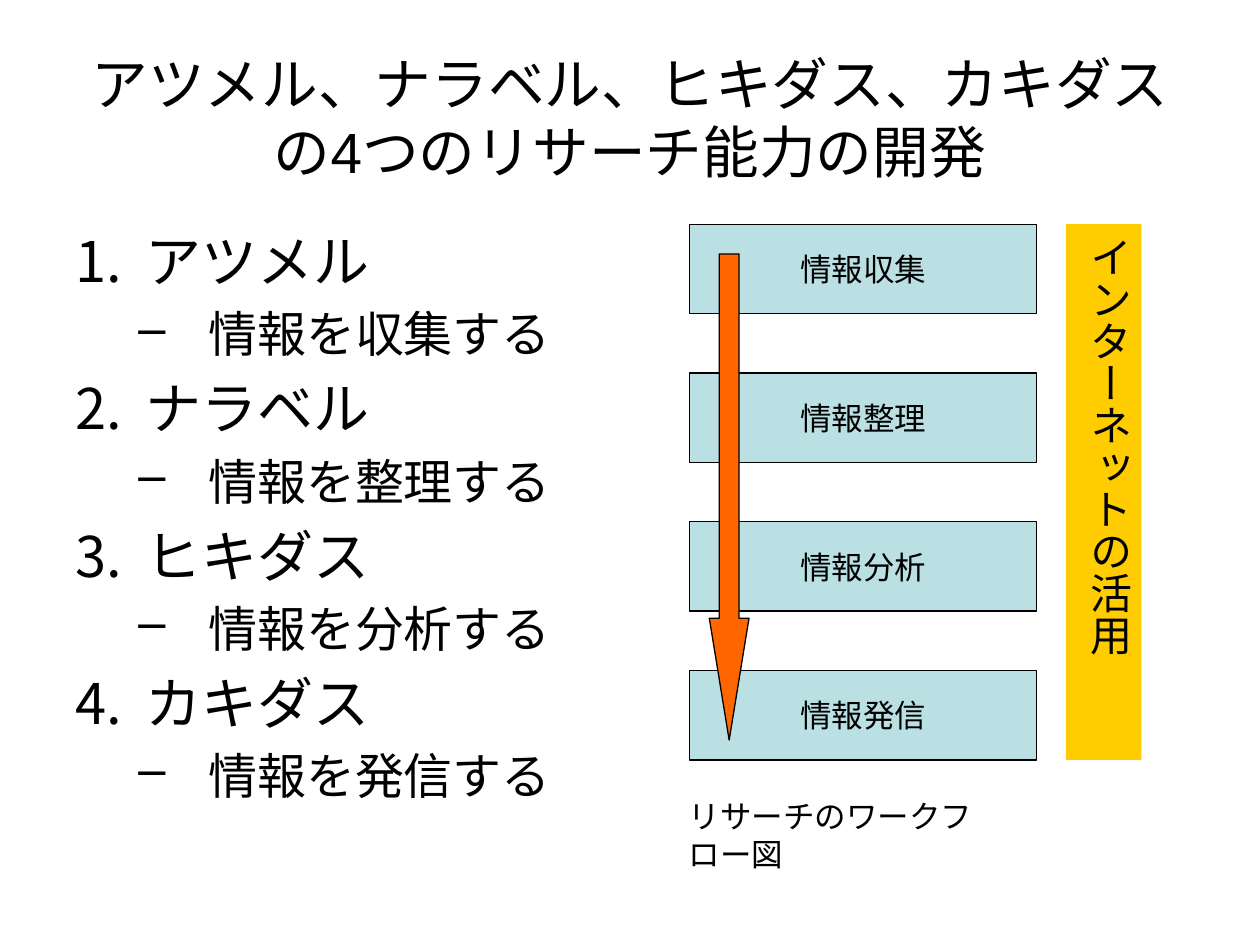
from lxml import etree
from pptx import Presentation
from pptx import util as u
from pptx.dml.color import RGBColor
from pptx.enum import shapes, text
from pptx.oxml.ns import qn

TITLE = "アツメル、ナラベル、ヒキダス、カキダス\vの4つのリサーチ能力の開発"
ABILITIES = [
    ("アツメル", "情報を収集する"),
    ("ナラベル", "情報を整理する"),
    ("ヒキダス", "情報を分析する"),
    ("カキダス", "情報を発信する"),
]
STAGES = ["情報収集", "情報整理", "情報分析", "情報発信"]
CAPTION = "リサーチのワークフロー図"
SIDEBAR = "インターネットの活用"

COLORS = {"ink": "000000", "stage": "BBE0E3", "arrow": "FF6600", "sidebar": "FFCC00"}

# Centimetres
STAGE_LEFT, STAGE_TOP, STAGE_WIDTH, STAGE_HEIGHT = 13.9, 4.52, 7.0, 1.8
STAGE_STEP = 3.0
FLOW_HEIGHT = STAGE_STEP * (len(STAGES) - 1) + STAGE_HEIGHT
INDENT = 1.41
SUB_INDENT = 2.68


def color(name):
    return RGBColor.from_string(COLORS[name])


def style(paragraph, size, font, align=text.PP_ALIGN.LEFT):
    paragraph.alignment = align
    for run in paragraph.runs:
        run.font.size = u.Pt(size)
        run.font.name = font
        run.font.color.rgb = color("ink")


def add_text(slide, *box):
    frame = slide.shapes.add_textbox(*map(u.Cm, box)).text_frame
    frame.word_wrap = True
    return frame


def add_block(slide, kind, fill, *box, outlined=True):
    block = slide.shapes.add_shape(kind, *map(u.Cm, box))
    block.shadow.inherit = False
    block.fill.solid()
    block.fill.fore_color.rgb = color(fill)
    if outlined:
        block.line.color.rgb = color("ink")
        block.line.width = u.Pt(0.75)
    else:
        block.line.fill.background()
    return block


def add_bullet(paragraph, margin, tag, **attributes):
    """Hang a bullet to the left of the paragraph's margin."""
    properties = paragraph._p.get_or_add_pPr()
    properties.set("marL", str(u.Cm(margin)))
    properties.set("indent", str(-u.Cm(INDENT)))
    etree.SubElement(properties, qn(tag), attributes)


def add_abilities(slide):
    frame = add_text(slide, 1.27, 4.45, 11.63, 12.57)
    lines = [(level, line) for pair in ABILITIES for level, line in enumerate(pair)]
    for index, (level, line) in enumerate(lines):
        paragraph = frame.add_paragraph() if index else frame.paragraphs[0]
        paragraph.text = line
        paragraph.level = level
        size = 28 if level else 32
        paragraph.space_before = u.Pt(size * 0.2)
        style(paragraph, size, "Arial")
        if level:
            add_bullet(paragraph, SUB_INDENT, "a:buChar", char="–")
        else:
            add_bullet(paragraph, INDENT, "a:buAutoNum", type="arabicPeriod")


def add_workflow(slide):
    rectangle = shapes.MSO_SHAPE.RECTANGLE
    for index, stage in enumerate(STAGES):
        block = add_block(slide, rectangle, "stage", STAGE_LEFT,
                          STAGE_TOP + index * STAGE_STEP, STAGE_WIDTH, STAGE_HEIGHT)
        frame = block.text_frame
        frame.text = stage
        frame.word_wrap = False
        frame.vertical_anchor = text.MSO_ANCHOR.MIDDLE
        style(frame.paragraphs[0], 18, "Calibri", text.PP_ALIGN.CENTER)

    arrow = add_block(slide, shapes.MSO_SHAPE.DOWN_ARROW, "arrow", 14.3, 5.12, 0.8, 9.8)
    arrow.adjustments[0] = 0.5
    arrow.adjustments[1] = 3.07

    caption = add_text(slide, 13.64, 15.95, 7.47, 1.02)
    caption.text = CAPTION
    style(caption.paragraphs[0], 18, "Calibri")

    sidebar = add_block(slide, rectangle, "sidebar", 21.49, STAGE_TOP, 1.52,
                        FLOW_HEIGHT, outlined=False).text_frame
    sidebar.text = SIDEBAR
    sidebar.word_wrap = True
    sidebar.vertical_anchor = text.MSO_ANCHOR.TOP
    sidebar._txBody.bodyPr.set("vert", "eaVert")
    style(sidebar.paragraphs[0], 24, "Calibri")


def main():
    deck = Presentation()
    deck.slide_width, deck.slide_height = u.Cm(25.4), u.Cm(19.05)
    slide = deck.slides.add_slide(deck.slide_layouts[6])

    title = add_text(slide, 1.27, 0.76, 22.86, 3.18)
    title.text = TITLE
    title.vertical_anchor = text.MSO_ANCHOR.MIDDLE
    for paragraph in title.paragraphs:
        style(paragraph, 32.4, "Arial", text.PP_ALIGN.CENTER)

    add_abilities(slide)
    add_workflow(slide)
    deck.save("out.pptx")


if __name__ == "__main__":
    main()
